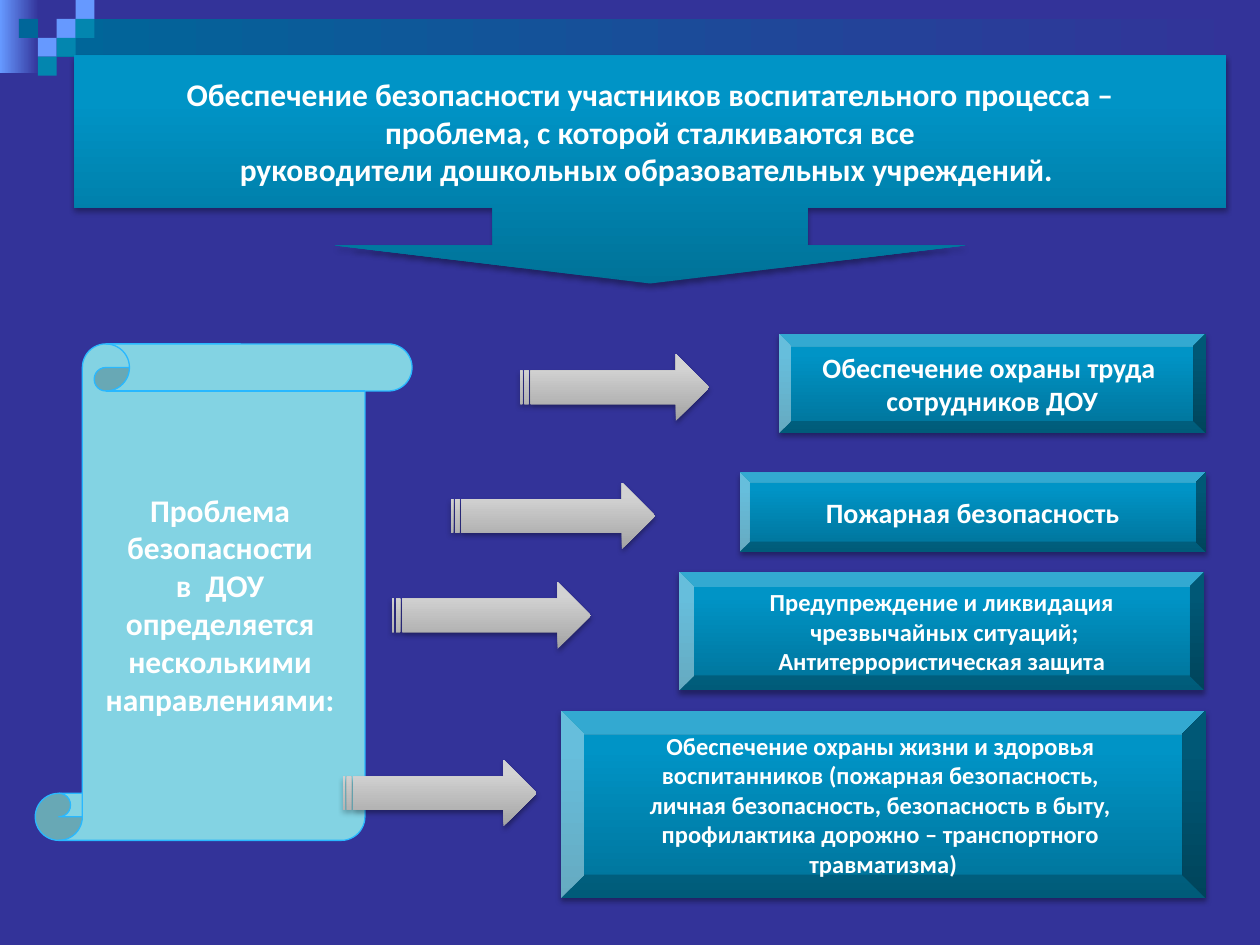
from lxml import etree
from pptx import Presentation
from pptx.dml.color import RGBColor
from pptx.enum.shapes import MSO_SHAPE
from pptx.enum.text import MSO_ANCHOR, PP_ALIGN
from pptx.oxml.ns import qn
from pptx.util import Inches, Pt

RECT = MSO_SHAPE.RECTANGLE
SCROLL = MSO_SHAPE.VERTICAL_SCROLL
CALLOUT = MSO_SHAPE.DOWN_ARROW_CALLOUT
BEVEL = MSO_SHAPE.BEVEL
ARROW = MSO_SHAPE.STRIPED_RIGHT_ARROW
CENTER = PP_ALIGN.CENTER
MIDDLE = MSO_ANCHOR.MIDDLE

INDIGO = RGBColor(0x33, 0x33, 0x99)
PERIWINKLE = RGBColor(0x66, 0x99, 0xFF)
NAVY = RGBColor(0x00, 0x66, 0x99)
TEAL = RGBColor(0x03, 0x86, 0xAF)
PALE_CYAN = RGBColor(0x83, 0xD3, 0xE3)
SKY = RGBColor(0x29, 0xB8, 0xFF)
DEEP_TEAL = RGBColor(0x00, 0x72, 0x98)
BRIGHT_TEAL = RGBColor(0x00, 0x94, 0xC6)
GRAY = RGBColor(0xA3, 0xA3, 0xA3)
SILVER = RGBColor(0xD3, 0xD3, 0xD3)
WHITE = RGBColor(0xFF, 0xFF, 0xFF)


class SlideBuilder:
    font = "Calibri"

    def __init__(self, slide):
        self.slide = slide

    def background(self, color):
        fill = self.slide.background.fill
        fill.solid()
        fill.fore_color.rgb = color

    def shape(self, kind, box, color):
        shape = self.slide.shapes.add_shape(kind, *map(Inches, box))
        shape.shadow.inherit = False
        shape.line.fill.background()
        shape.fill.solid()
        shape.fill.fore_color.rgb = color
        return shape

    def gradient(self, kind, box, start, end, angle=0, end_at=1.0):
        shape = self.shape(kind, box, start)
        shape.fill.gradient()
        shape.fill.gradient_angle = angle
        first, last = shape.fill.gradient_stops
        first.color.rgb, first.position = start, 0
        last.color.rgb, last.position = end, end_at
        return shape

    def raised(self, kind, box, start, end):
        """Vertical gradient, dark at the bottom, with a soft shadow below."""
        shape = self.gradient(kind, box, start, end, angle=90, end_at=0.8)
        effects = shape._element.spPr.find(qn("a:effectLst"))
        shadow = etree.SubElement(
            effects, qn("a:outerShdw"), blurRad=str(Pt(3.1)),
            dist=str(Pt(1.8)), dir="5400000", rotWithShape="0")
        color = etree.SubElement(shadow, qn("a:srgbClr"), val="000000")
        etree.SubElement(color, qn("a:alpha"), val="35000")
        return shape

    def label(self, shape, lines, size):
        frame = shape.text_frame
        frame.word_wrap = False
        frame.vertical_anchor = MIDDLE
        frame.text = "\n".join(lines)
        for paragraph in frame.paragraphs:
            paragraph.alignment = CENTER
            font = paragraph.font
            font.name, font.size, font.bold = self.font, Pt(size), True
            font.color.rgb = WHITE

    def panel(self, box, lines, size):
        self.label(self.raised(BEVEL, box, DEEP_TEAL, BRIGHT_TEAL), lines, size)

    def arrow(self, left, top, width):
        self.raised(ARROW, (left, top, width, 0.53), GRAY, SILVER)


def main():
    prs = Presentation()
    prs.slide_width, prs.slide_height = Inches(10), Inches(7.5)
    page = SlideBuilder(prs.slides.add_slide(prs.slide_layouts[6]))
    page.background(INDIGO)

    # Corner decoration: two fading bars and a mosaic of squares
    page.gradient(RECT, (0, 0, 0.31, 0.58), PERIWINKLE, INDIGO)
    page.gradient(RECT, (0.45, 0.15, 9.55, 0.3), NAVY, INDIGO)
    tile = 0.15
    mosaic = [(3, 1, PERIWINKLE), (4, 0, PERIWINKLE), (4, 1, TEAL),
              (2, 2, PERIWINKLE), (1, 1, NAVY), (3, 2, TEAL), (2, 3, TEAL)]
    for column, row, color in mosaic:
        page.shape(RECT, (column * tile, row * tile, tile, tile), color)

    # Scroll that names the problem
    scroll = page.shape(SCROLL, (0.28, 2.73, 2.99, 3.94), PALE_CYAN)
    scroll.line.color.rgb = SKY
    scroll.line.width = Pt(0.75)
    page.label(scroll, ["Проблема ", "безопасности ", "в  ДОУ ", "определяется ",
                        "несколькими ", "направлениями: "], 18)

    # Heading callout
    heading = page.raised(CALLOUT, (0.59, 0.44, 9.14, 1.81), DEEP_TEAL, BRIGHT_TEAL)
    for index, value in enumerate((1.382, 1.382, 0.167, 0.667)):
        heading.adjustments[index] = value
    page.label(heading, [
        "Обеспечение безопасности участников воспитательного процесса –",
        " проблема, с которой сталкиваются все ",
        "руководители дошкольных образовательных учреждений. "], 18)

    # Directions of safety work: panel box, text size, lines, arrow place
    directions = [
        ((6.18, 2.65, 3.39, 0.79), 16,
         ["Обеспечение охраны труда ", "сотрудников ДОУ"], (4.13, 2.81, 1.5)),
        ((5.87, 3.75, 3.7, 0.63), 16,
         ["Пожарная безопасность"], (3.58, 3.83, 1.62)),
        ((5.39, 4.54, 4.17, 0.94), 14,
         ["Предупреждение и ликвидация", " чрезвычайных ситуаций;",
          "Антитеррористическая защита"], (3.11, 4.62, 1.58)),
        ((4.45, 5.64, 5.12, 1.49), 14,
         ["Обеспечение охраны жизни и здоровья ",
          "воспитанников (пожарная безопасность, ",
          "личная безопасность, безопасность в быту, ",
          "профилактика дорожно – транспортного ",
          "травматизма)"], (2.72, 6.03, 1.54)),
    ]
    for box, size, lines, arrow_place in directions:
        page.panel(box, lines, size)
        page.arrow(*arrow_place)

    prs.save("out.pptx")


if __name__ == "__main__":
    main()
